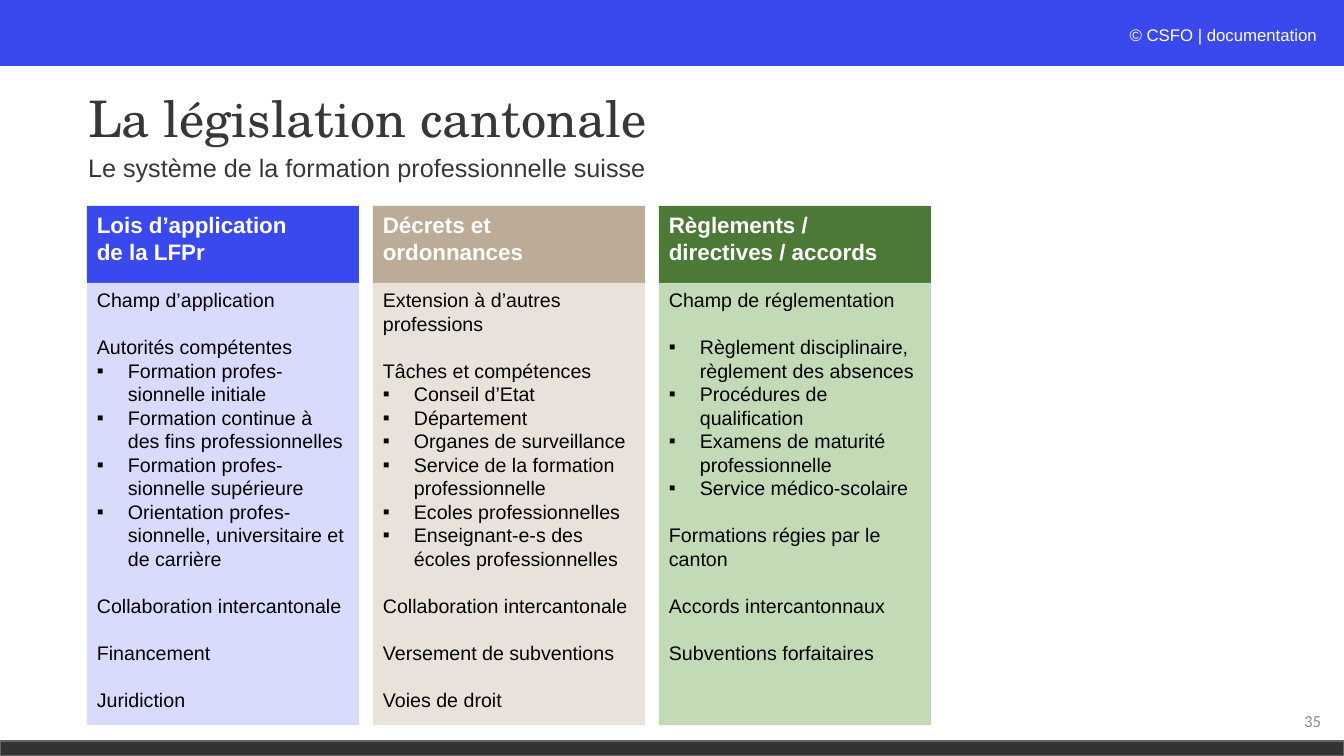
from dataclasses import dataclass

from lxml.etree import SubElement
from pptx import Presentation
from pptx.dml.color import RGBColor
from pptx.enum.shapes import MSO_SHAPE as Shape
from pptx.enum.text import MSO_ANCHOR as Anchor, MSO_AUTO_SIZE as AutoSize, PP_ALIGN as Align
from pptx.oxml.ns import qn
from pptx.util import Emu, Pt

PAGE_WIDTH, PAGE_HEIGHT = 1344, 756
COLUMN_LEFT, COLUMN_WIDTH, COLUMN_PITCH = 87, 272, 286
HEADER_TOP, HEADER_HEIGHT, BODY_HEIGHT = 206, 77, 442
BULLET_INDENT = 31
ITEM_GAP = 16.8
BLUE, DARK, WHITE, BLACK = "3A49EE", "373737", "FFFFFF", "000000"


@dataclass(frozen=True)
class Item:
    text: str
    bullet: bool = False
    gap: bool = False


@dataclass(frozen=True)
class Column:
    heading: tuple[str, str]
    dark: str
    light: str
    items: tuple[Item, ...]


COLUMNS = (
    Column(("Lois d’application", "de la LFPr"), BLUE, "D8DBFC", (
        Item("Champ d’application"),
        Item("Autorités compétentes", gap=True),
        Item("Formation profes-sionnelle initiale", bullet=True),
        Item("Formation continue à des fins professionnelles", bullet=True),
        Item("Formation profes-sionnelle supérieure", bullet=True),
        Item("Orientation profes-sionnelle, universitaire et de carrière", bullet=True),
        Item("Collaboration intercantonale", gap=True),
        Item("Financement", gap=True),
        Item("Juridiction", gap=True),
    )),
    Column(("Décrets et", "ordonnances"), "BCAB96", "E8E2DB", (
        Item("Extension à d’autres professions"),
        Item("Tâches et compétences", gap=True),
        Item("Conseil d’Etat", bullet=True),
        Item("Département", bullet=True),
        Item("Organes de surveillance", bullet=True),
        Item("Service de la formation professionnelle", bullet=True),
        Item("Ecoles professionnelles", bullet=True),
        Item("Enseignant-e-s des écoles professionnelles", bullet=True),
        Item("Collaboration intercantonale", gap=True),
        Item("Versement de subventions", gap=True),
        Item("Voies de droit", gap=True),
    )),
    Column(("Règlements /", "directives / accords"), "4C7936", "C2DAB6", (
        Item("Champ de réglementation"),
        Item("Règlement disciplinaire, règlement des absences", bullet=True, gap=True),
        Item("Procédures de qualification", bullet=True),
        Item("Examens de maturité professionnelle", bullet=True),
        Item("Service médico-scolaire", bullet=True),
        Item("Formations régies par le canton", gap=True),
        Item("Accords intercantonnaux", gap=True),
        Item("Subventions forfaitaires", gap=True),
    )),
)


def px(length: int) -> Emu:
    return Emu(round(length * 914400 / 100.8))


def color(value: str) -> RGBColor:
    return RGBColor.from_string(value)


def add_span(para, text: str, size: int, ink: str, face: str = "Arial",
             bold: bool = False, italic: bool = False) -> None:
    span = para.add_run()
    span.text = text
    span.font.size = Pt(size)
    span.font.name = face
    span.font.bold = bold
    span.font.italic = italic
    span.font.color.rgb = color(ink)


def add_panel(shapes, left: int, top: int, width: int, height: int, fill: str):
    panel = shapes.add_shape(Shape.RECTANGLE, px(left), px(top), px(width), px(height))
    panel.shadow.inherit = False
    panel.fill.solid()
    panel.fill.fore_color.rgb = color(fill)
    panel.line.fill.background()
    panel.text_frame.vertical_anchor = Anchor.TOP
    return panel


def add_bullet(para) -> None:
    props = para._p.get_or_add_pPr()
    props.set("marL", str(px(BULLET_INDENT)))
    props.set("indent", str(-px(BULLET_INDENT)))
    SubElement(props, qn("a:buFont"), typeface="Arial")
    SubElement(props, qn("a:buChar"), char="▪")


def next_para(frame, index: int):
    """Reuse the paragraph a new frame already holds for index 0."""
    para = frame.add_paragraph() if index else frame.paragraphs[0]
    para.alignment = Align.LEFT
    return para


def add_column(shapes, column: Column, left: int) -> None:
    header = add_panel(shapes, left, HEADER_TOP, COLUMN_WIDTH, HEADER_HEIGHT, column.dark)
    for index, text in enumerate(column.heading):
        add_span(next_para(header.text_frame, index), text, 16, WHITE, bold=True)

    body = add_panel(shapes, left, HEADER_TOP + HEADER_HEIGHT, COLUMN_WIDTH, BODY_HEIGHT, column.light)
    for index, item in enumerate(column.items):
        para = next_para(body.text_frame, index)
        if item.bullet:
            add_bullet(para)
        if item.gap:
            para.space_before = Pt(ITEM_GAP)
        add_span(para, item.text, 14, BLACK)


def fill_placeholder(box, left: int, top: int, width: int, height: int, anchor: Anchor,
                     text: str, size: int, face: str) -> None:
    box.left, box.top, box.width, box.height = px(left), px(top), px(width), px(height)
    box.text_frame.auto_size = AutoSize.NONE
    box.text_frame.vertical_anchor = anchor
    para = next_para(box.text_frame, 0)
    props = para._p.get_or_add_pPr()
    props.set("marL", "0")
    props.set("indent", "0")
    SubElement(props, qn("a:buNone"))
    para.line_spacing = 0.9
    para.space_before = Pt(0)
    add_span(para, text, size, DARK, face)


def add_right_label(shapes, left: int, top: int, width: int, height: int):
    box = shapes.add_textbox(px(left), px(top), px(width), px(height))
    box.text_frame.word_wrap = True
    box.text_frame.vertical_anchor = Anchor.MIDDLE
    para = box.text_frame.paragraphs[0]
    para.alignment = Align.RIGHT
    return para


def main() -> None:
    deck = Presentation()
    deck.slide_width, deck.slide_height = px(PAGE_WIDTH), px(PAGE_HEIGHT)
    page = deck.slides.add_slide(deck.slide_layouts[1])
    shapes = page.shapes

    fill_placeholder(shapes.title, 78, 48, 889, 146, Anchor.MIDDLE,
                     "La législation cantonale", 36, "TeX Gyre Schola")
    fill_placeholder(page.placeholders[1], 78, 151, 888, 54, Anchor.TOP,
                     "Le système de la formation professionnelle suisse", 18, "Arial")

    add_panel(shapes, 0, 0, PAGE_WIDTH, 66, BLUE)
    footer = add_panel(shapes, 0, 741, PAGE_WIDTH, 15, "333333")
    footer.line.color.rgb = color("666360")
    footer.line.width = Pt(1)

    credit = add_right_label(shapes, 869, 20, 458, 30)
    add_span(credit, "© ", 12, "FCFDFE", italic=True)
    add_span(credit, "CSFO | documentation", 12, WHITE)
    page_number = add_right_label(shapes, 1029, 701, 302, 40)
    add_span(page_number, "35", 12, "8C8C8C", "Calibri")

    columns = shapes.add_group_shape().shapes
    for index, column in enumerate(COLUMNS):
        add_column(columns, column, COLUMN_LEFT + index * COLUMN_PITCH)

    deck.save("out.pptx")


if __name__ == "__main__":
    main()
